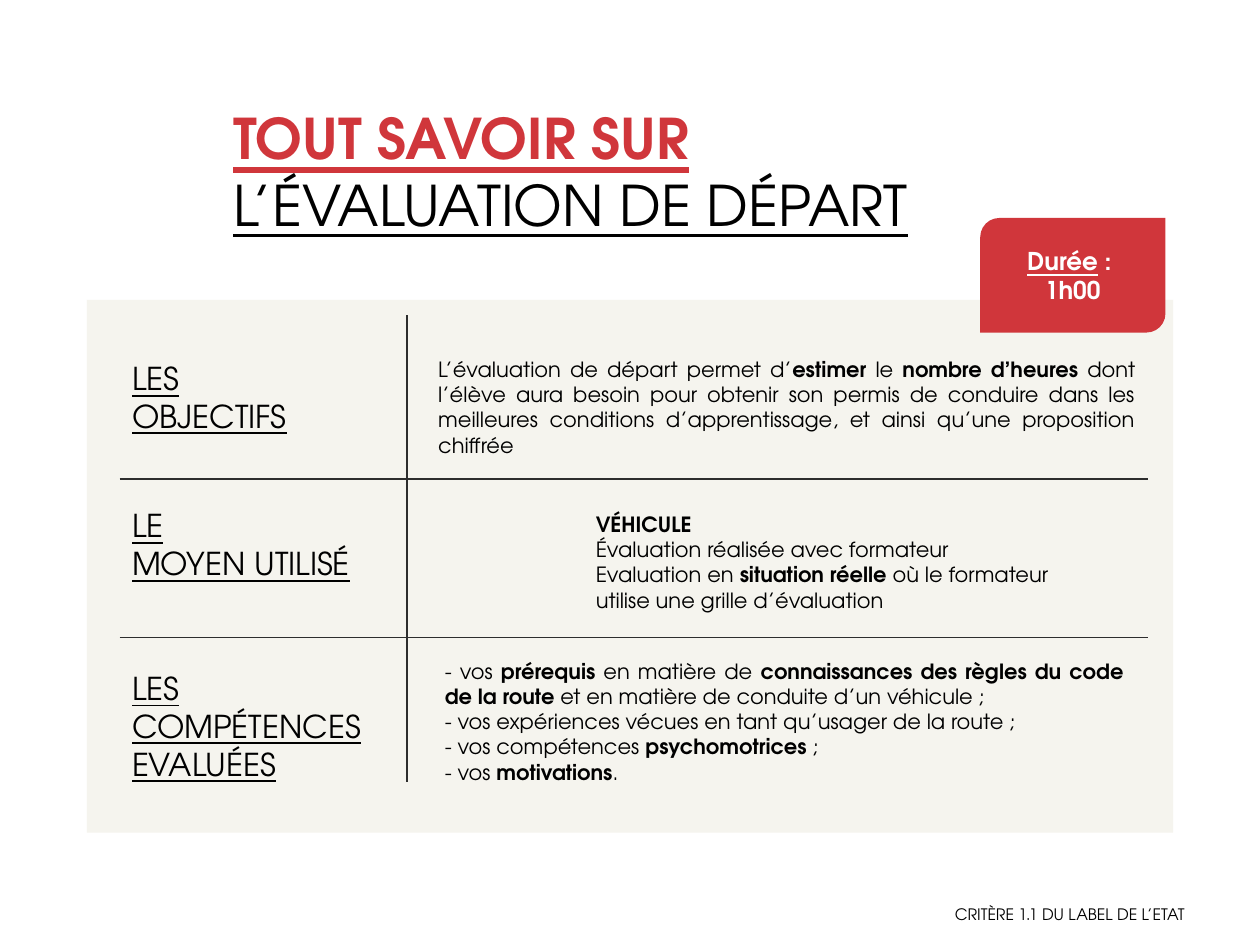
import copy
import pptx
import pptx.util
import pptx.dml.color
import pptx.enum.shapes
import pptx.enum.text
import pptx.oxml
import pptx.oxml.ns

Inches = pptx.util.Inches
Pt = pptx.util.Pt
qn = pptx.oxml.ns.qn
ALIGN = pptx.enum.text.PP_ALIGN
ANCHOR = pptx.enum.text.MSO_ANCHOR
SHAPE = pptx.enum.shapes.MSO_SHAPE
RED = pptx.dml.color.RGBColor(0xD0, 0x36, 0x3B)
BLACK = pptx.dml.color.RGBColor(0, 0, 0)
WHITE = pptx.dml.color.RGBColor(0xFF, 0xFF, 0xFF)
CREAM = pptx.dml.color.RGBColor(0xF5, 0xF4, 0xEE)
DARK = pptx.dml.color.RGBColor(0x2D, 0x2D, 0x2D)
FONT = "TeX Gyre Adventor"


def write(shape, paras, size, align=ALIGN.LEFT, color=BLACK, under=False, anchor=ANCHOR.TOP):
    frame = shape.text_frame
    frame.word_wrap = True
    frame.auto_size = pptx.enum.text.MSO_AUTO_SIZE.NONE
    frame.vertical_anchor = anchor
    for num, text in enumerate(paras):
        para = frame.add_paragraph() if num else frame.paragraphs[0]
        para.alignment = align
        para.space_before = Pt(0)
        for odd, chunk in enumerate(text.split("*")):
            for row, line in enumerate(chunk.split("\n")):
                if row:
                    para.add_line_break()
                if line:
                    run = para.add_run()
                    run.text = line
                    run.font.name = FONT
                    run.font.size = Pt(size)
                    run.font.bold = odd % 2 == 1
                    run.font.underline = under
                    run.font.color.rgb = color
        for gap in para._p.findall(qn("a:br")):
            gap.append(copy.deepcopy(gap.getprevious().find(qn("a:rPr"))))


def place(shape, left, top, width, height):
    shape.left, shape.top = Inches(left), Inches(top)
    shape.width, shape.height = Inches(width), Inches(height)


deck = pptx.Presentation()
deck.slide_width = Inches(10)
deck.slide_height = Inches(7.5)
slide = deck.slides.add_slide(deck.slide_layouts[1])
shapes = slide.shapes

title = shapes.title
place(title, 1.75, 0.77, 7.72, 1.18)
write(title, ["*TOUT SAVOIR SUR\n*L’ÉVALUATION DE DÉPART"], 32, under=True)
title.text_frame.paragraphs[0].runs[0].font.color.rgb = RED

panel = shapes.add_shape(SHAPE.RECTANGLE, Inches(0.69), Inches(2.38), Inches(8.62), Inches(4.23))
panel.shadow.inherit = False
panel.fill.solid()
panel.fill.fore_color.rgb = CREAM
panel.line.fill.background()
title.element.addnext(panel.element)

skills = slide.placeholders[1]
place(skills, 3.43, 5.18, 5.59, 1.09)
write(skills, [
    "- vos *prérequis* en matière de *connaissances des règles du code de la route*"
    " et en matière de conduite d’un véhicule ;",
    "- vos expériences vécues en tant qu’usager de la route ;",
    "- vos compétences *psychomotrices* ;",
    "- vos *motivations*.",
], 12, ALIGN.JUSTIFY, anchor=ANCHOR.MIDDLE)
for para in skills.text_frame.paragraphs:
    props = para._p.get_or_add_pPr()
    props.set("marL", "0")
    props.set("indent", "0")
    props.append(pptx.oxml.parse_xml(
        '<a:buNone xmlns:a="http://schemas.openxmlformats.org/drawingml/2006/main"/>'))

for x1, y1, x2, y2 in [(0.95, 3.8, 9.11, 3.8), (0.95, 5.06, 9.11, 5.06), (3.23, 2.5, 3.23, 6.21)]:
    rule = shapes.add_connector(pptx.enum.shapes.MSO_CONNECTOR.STRAIGHT,
                                Inches(x1), Inches(y1), Inches(x2), Inches(y2))
    rule.line.color.rgb = DARK
    rule.line.width = Pt(1)
    rule.element.spPr.append(pptx.oxml.parse_xml(
        '<a:effectLst xmlns:a="http://schemas.openxmlformats.org/drawingml/2006/main"/>'))

goal = ("L’évaluation de départ permet d’*estimer* le *nombre d’heures *dont l’élève aura besoin "
        "pour obtenir son permis de conduire dans les meilleures conditions d’apprentissage, "
        "et ainsi qu’une proposition chiffrée")
means = ("Évaluation réalisée avec formateur\nEvaluation en *situation réelle *où le formateur\n"
         "utilise une grille d’évaluation")
for left, top, width, height, paras, size, align, under in [
    (3.38, 2.78, 5.73, 0.91, [goal], 12, ALIGN.JUSTIFY, False),
    (4.63, 4.01, 4.29, 0.91, ["*VÉHICULE", means], 12, ALIGN.LEFT, False),
    (0.95, 2.8, 1.58, 0.71, ["LES\nOBJECTIFS"], 18, ALIGN.LEFT, True),
    (0.95, 3.97, 2.04, 0.71, ["LE\nMOYEN UTILISÉ"], 18, ALIGN.LEFT, True),
    (0.95, 5.26, 2.09, 1.01, ["LES\nCOMPÉTENCES\nEVALUÉES"], 18, ALIGN.LEFT, True),
    (7.48, 7.13, 2.31, 0.25, ["CRITÈRE 1.1 DU LABEL DE L’ETAT"], 9, ALIGN.LEFT, False),
]:
    box = shapes.add_textbox(Inches(left), Inches(top), Inches(width), Inches(height))
    write(box, paras, size, align, under=under)

badge = shapes.add_shape(SHAPE.ROUND_2_DIAG_RECTANGLE,
                         Inches(7.78), Inches(1.73), Inches(1.47), Inches(0.91))
badge.shadow.inherit = False
badge.fill.solid()
badge.fill.fore_color.rgb = RED
badge.line.fill.background()
write(badge, ["*Durée** : \n1h00"], 14, ALIGN.CENTER, WHITE, anchor=ANCHOR.MIDDLE)
badge.text_frame.paragraphs[0].runs[0].font.underline = True

deck.save("out.pptx")
